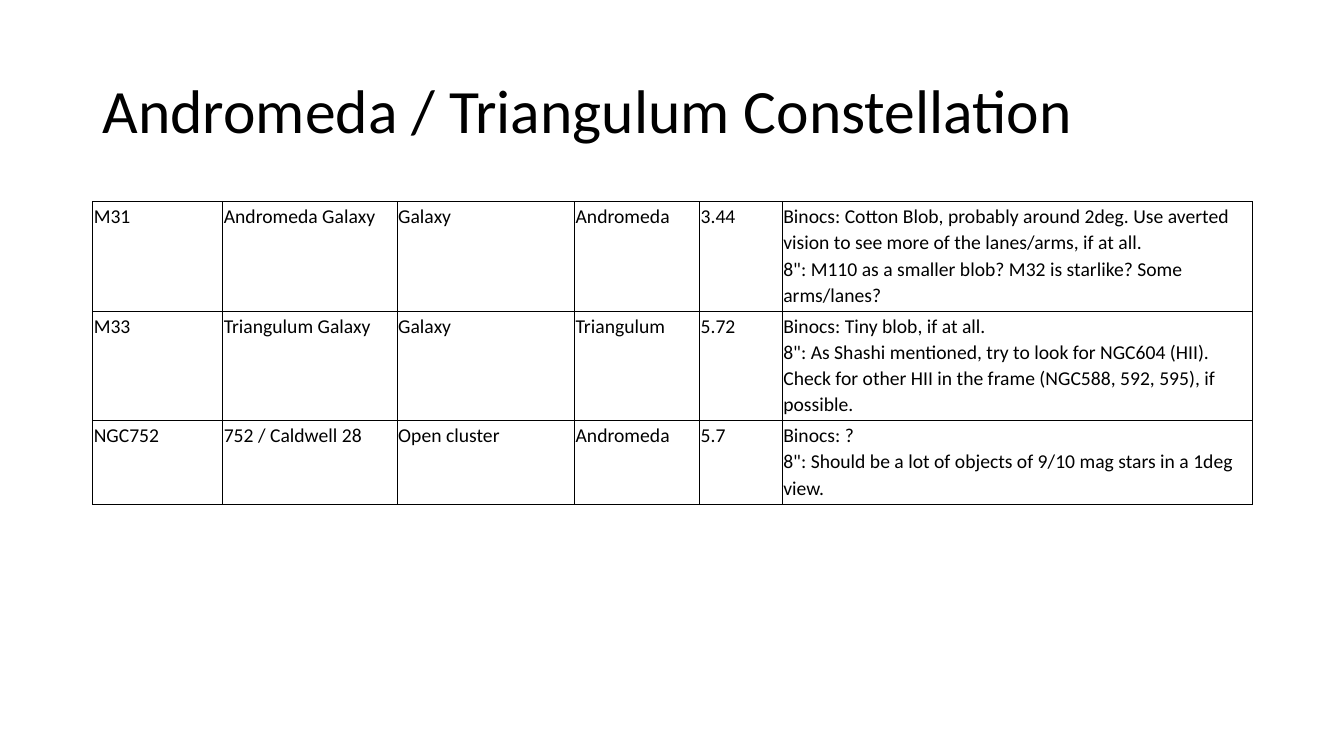
import dataclasses

import lxml.etree
import pptx
import pptx.dml.color
import pptx.enum.text
import pptx.oxml.ns
import pptx.util

EMU_PER_PX = 9144  # 100 px to the inch
FONT = "Calibri"
COLORS = {"text": "000000", "border": "000000"}
BORDER_WIDTH = pptx.util.Pt(0.5)
COLUMN_WIDTHS = [129, 173, 176, 124, 82, 466]
ROW_HEIGHTS = [83, 83, 62]


@dataclasses.dataclass
class DeepSkyObject:
    designation: str
    name: str
    kind: str
    constellation: str
    magnitude: str
    notes: str

    def cell_texts(self) -> list[str]:
        return list(dataclasses.astuple(self))


OBJECTS = [
    DeepSkyObject(
        "M31", "Andromeda Galaxy", "Galaxy", "Andromeda", "3.44",
        "Binocs: Cotton Blob, probably around 2deg. Use averted vision to see more of the lanes/arms, if at all.\n"
        '8": M110 as a smaller blob? M32 is starlike? Some arms/lanes?',
    ),
    DeepSkyObject(
        "M33", "Triangulum Galaxy", "Galaxy", "Triangulum", "5.72",
        "Binocs: Tiny blob, if at all.\n"
        '8": As Shashi mentioned, try to look for NGC604 (HII). '
        "Check for other HII in the frame (NGC588, 592, 595), if possible.",
    ),
    DeepSkyObject(
        "NGC752", "752 / Caldwell 28", "Open cluster", "Andromeda", "5.7",
        "Binocs: ?\n"
        '8": Should be a lot of objects of 9/10 mag stars in a 1deg view.',
    ),
]


def px(length: int) -> pptx.util.Emu:
    return pptx.util.Emu(length * EMU_PER_PX)


def write_text(text_frame, text: str, size: int, line_spacing: float) -> None:
    text_frame.text = text
    for paragraph in text_frame.paragraphs:
        paragraph.line_spacing = line_spacing
        for run in paragraph.runs:
            run.font.name = FONT
            run.font.size = pptx.util.Pt(size)
            run.font.color.rgb = pptx.dml.color.RGBColor.from_string(COLORS["text"])


def add_title(slide, text: str) -> None:
    shape = slide.shapes.add_textbox(px(92), px(40), px(1150), px(145))
    shape.text_frame.word_wrap = True
    shape.text_frame.vertical_anchor = pptx.enum.text.MSO_ANCHOR.MIDDLE
    write_text(shape.text_frame, text, 44, 0.9)


def add_borders(cell) -> None:
    properties = cell._tc.get_or_add_tcPr()
    qualified_name = pptx.oxml.ns.qn
    # Border lines come before the fill in the cell properties
    for index, side in enumerate(("a:lnL", "a:lnR", "a:lnT", "a:lnB")):
        line = lxml.etree.Element(qualified_name(side), w=str(BORDER_WIDTH))
        fill = lxml.etree.SubElement(line, qualified_name("a:solidFill"))
        lxml.etree.SubElement(fill, qualified_name("a:srgbClr"), val=COLORS["border"])
        properties.insert(index, line)


def format_cell(cell, text: str) -> None:
    cell.fill.background()
    cell.margin_left = cell.margin_right = cell.margin_top = px(1)
    cell.margin_bottom = px(5)
    write_text(cell.text_frame, text, 14, 1.1)
    add_borders(cell)


def add_object_table(slide, objects: list[DeepSkyObject]) -> None:
    table = slide.shapes.add_table(
        len(objects), len(COLUMN_WIDTHS),
        px(92), px(200), px(sum(COLUMN_WIDTHS)), px(sum(ROW_HEIGHTS)),
    ).table
    table.first_row = False
    table.horz_banding = False
    for column, width in zip(table.columns, COLUMN_WIDTHS):
        column.width = px(width)
    for row, height, sky_object in zip(table.rows, ROW_HEIGHTS, objects):
        row.height = px(height)
        for cell, text in zip(row.cells, sky_object.cell_texts()):
            format_cell(cell, text)


def main() -> None:
    presentation = pptx.Presentation()
    presentation.slide_width = px(1333)
    presentation.slide_height = px(750)
    slide = presentation.slides.add_slide(presentation.slide_layouts[6])

    # Heading and observing list
    add_title(slide, "Andromeda / Triangulum Constellation")
    add_object_table(slide, OBJECTS)

    presentation.save("out.pptx")


if __name__ == "__main__":
    main()
